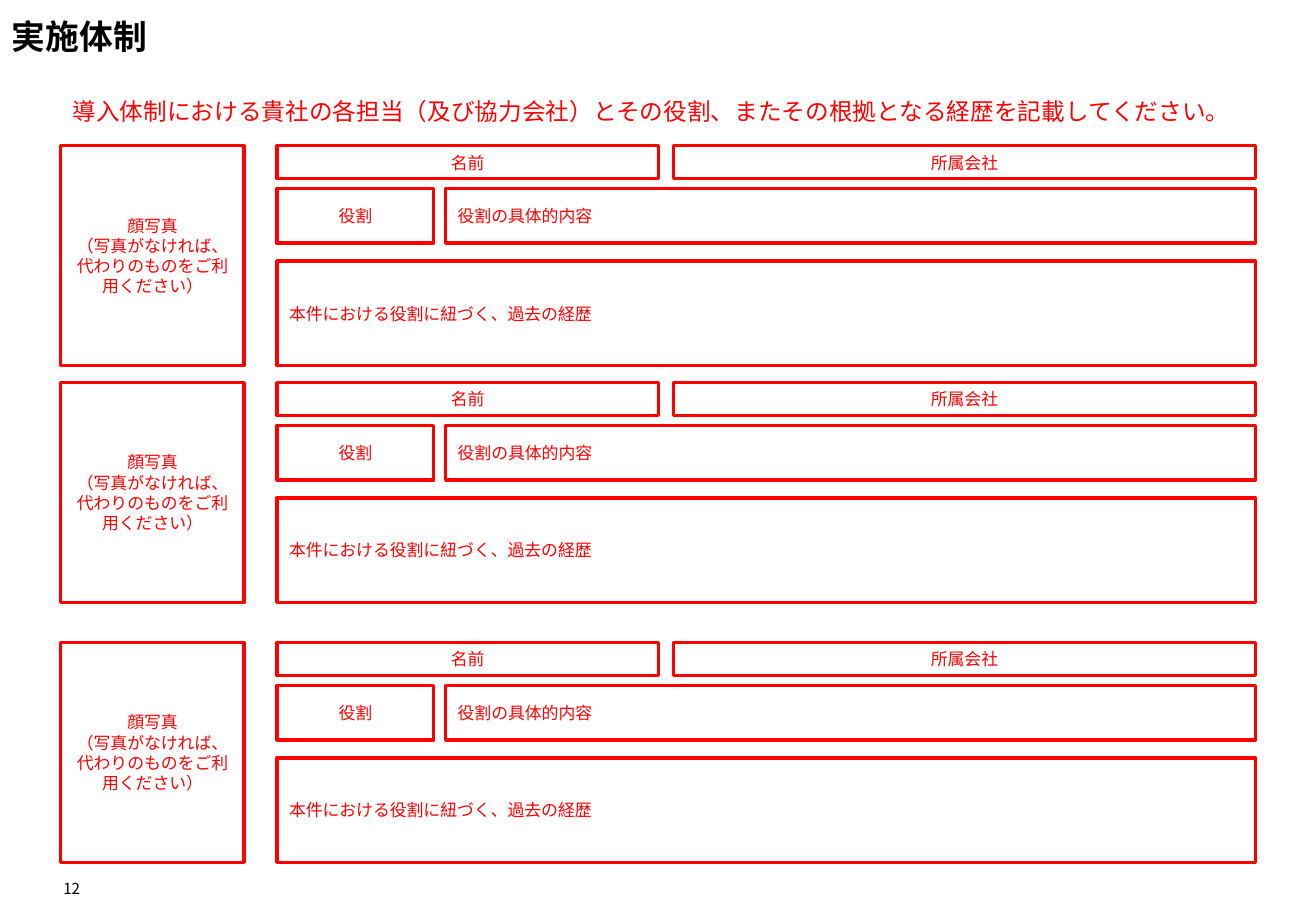
import dataclasses

import lxml.etree
import pptx
import pptx.dml.color
import pptx.enum.shapes
import pptx.enum.text
import pptx.oxml.ns
import pptx.util

Pt = pptx.util.Pt
RGB = pptx.dml.color.RGBColor
ALIGN = pptx.enum.text.PP_ALIGN
ANCHOR = pptx.enum.text.MSO_ANCHOR
RECTANGLE = pptx.enum.shapes.MSO_SHAPE.RECTANGLE


@dataclasses.dataclass(frozen=True)
class Theme:
    """Colours, type sizes and font of the slide."""
    font: str = "Noto Sans CJK JP"
    ink: RGB = RGB(0, 0, 0)
    accent: RGB = RGB(255, 0, 0)
    paper: RGB = RGB(255, 255, 255)
    title: int = 20
    intro: int = 14
    body: int = 10
    number: int = 9
    line: int = 2


THEME = Theme()
MEMBER_TOPS = (86.4, 226.8, 380.9)
PHOTO = "顔写真\n（写真がなければ、代わりのものをご利用ください）"
FIELDS = (
    (PHOTO, 36, 0, 108.7, 130.3, ALIGN.CENTER),
    ("名前", 164.2, 0, 226, 19.6, ALIGN.CENTER),
    ("所属会社", 399.2, 0, 344.9, 19.6, ALIGN.CENTER),
    ("役割", 164.2, 25.3, 92.9, 32.4, ALIGN.CENTER),
    ("役割の具体的内容", 264.2, 25.3, 480, 32.4, ALIGN.LEFT),
    ("本件における役割に紐づく、過去の経歴", 164.2, 68.4, 580, 61.9, ALIGN.LEFT),
)


def write(tf, text, size, color, align=ALIGN.LEFT, anchor=ANCHOR.MIDDLE, bold=False):
    """Fill a text frame and format its runs."""
    tf.text = text
    tf.word_wrap = True
    tf.vertical_anchor = anchor
    for p in tf.paragraphs:
        p.alignment = align
        for r in p.runs:
            r.font.size = Pt(size)
            r.font.bold = bold
            r.font.color.rgb = color
            r.font.name = THEME.font
            ea = lxml.etree.SubElement(r.font._element, pptx.oxml.ns.qn("a:ea"))
            ea.set("typeface", THEME.font)


def add_text(s, text, left, top, width, height, size, color, **style):
    """Add a text box and return its text frame."""
    tf = s.shapes.add_textbox(Pt(left), Pt(top), Pt(width), Pt(height)).text_frame
    write(tf, text, size, color, **style)
    return tf


def add_field(s, text, left, top, width, height, align):
    """Add one outlined entry field."""
    sp = s.shapes.add_shape(RECTANGLE, Pt(left), Pt(top), Pt(width), Pt(height))
    sp.shadow.inherit = False
    sp.fill.solid()
    sp.fill.fore_color.rgb = THEME.paper
    sp.line.color.rgb = THEME.accent
    sp.line.width = Pt(THEME.line)
    write(sp.text_frame, text, THEME.body, THEME.accent, align)


def add_member(s, top):
    """Add the fields that describe one team member."""
    for text, left, offset, width, height, align in FIELDS:
        add_field(s, text, left, top + offset, width, height, align)


def add_page_number(s, text):
    """Add the page number without margins."""
    tf = add_text(s, text, 33.1, 518.4, 14.4, 13.7, THEME.number, THEME.ink,
                  align=ALIGN.RIGHT, anchor=ANCHOR.BOTTOM)
    tf.word_wrap = False
    tf.margin_left = tf.margin_right = tf.margin_top = tf.margin_bottom = 0


def main():
    """Build the team structure slide."""
    prs = pptx.Presentation()
    prs.slide_width, prs.slide_height = Pt(780), Pt(540)
    s = prs.slides.add_slide(prs.slide_layouts[6])
    add_text(s, "実施体制", 0, -0.7, 672.5, 43.9, THEME.title, THEME.ink, bold=True)
    add_text(s, "導入体制における貴社の各担当（及び協力会社）とその役割、またその根拠となる経歴を記載してください。",
             36, 54, 708.5, 38.2, THEME.intro, THEME.accent, anchor=ANCHOR.TOP)
    for top in MEMBER_TOPS:
        add_member(s, top)
    add_page_number(s, "12")
    prs.save("out.pptx")


if __name__ == "__main__":
    main()
